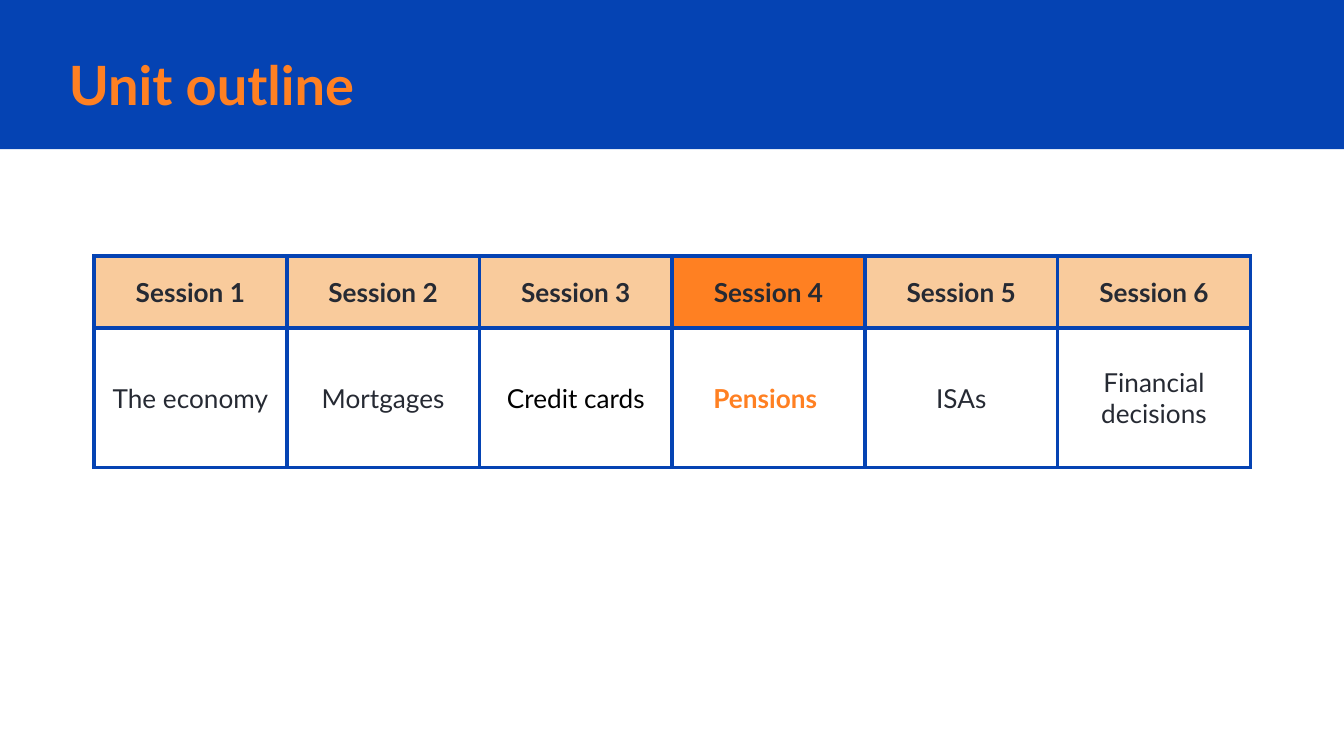
from dataclasses import dataclass

from lxml import etree
from pptx import Presentation
from pptx.dml.color import RGBColor
from pptx.enum.shapes import MSO_SHAPE
from pptx.enum.text import MSO_ANCHOR, PP_ALIGN
from pptx.oxml.ns import qn
from pptx.util import Pt

RECT = MSO_SHAPE.RECTANGLE
MIDDLE = MSO_ANCHOR.MIDDLE
LEFT, CENTER = PP_ALIGN.LEFT, PP_ALIGN.CENTER

BLUE = RGBColor(0x05, 0x43, 0xB3)
ORANGE = RGBColor(0xFF, 0x80, 0x22)
PEACH = RGBColor(0xF9, 0xCB, 0x9C)
INK = RGBColor(0x26, 0x2A, 0x33)
BLACK = RGBColor(0, 0, 0)

FONT = "Lato"
WIDTH, HEIGHT = 720, 405
COL = 103.25
ROWS = (38.6, 74.6)
EDGE = 2.25
SIDES = ("a:lnL", "a:lnR", "a:lnT", "a:lnB")


@dataclass
class Unit:
    topic: str
    fill: RGBColor = PEACH
    ink: RGBColor = INK
    bold: bool = False


UNITS = [
    Unit("The economy"),
    Unit("Mortgages"),
    Unit("Credit cards", ink=BLACK),
    Unit("Pensions ", ORANGE, ORANGE, True),
    Unit("ISAs"),
    Unit("Financial decisions"),
]


def write(frame, text: str, size: float, ink: RGBColor, bold: bool, align) -> None:
    para = frame.paragraphs[0]
    para.alignment = align
    run = para.add_run()
    run.text = text
    for name, value in {"name": FONT, "size": Pt(size), "bold": bold}.items():
        setattr(run.font, name, value)
    run.font.color.rgb = ink


def pad(box, inset: float) -> None:
    for side in ("left", "right", "top", "bottom"):
        setattr(box, f"margin_{side}", Pt(inset))
    box.vertical_anchor = MIDDLE


def border(cell) -> None:
    props = cell._tc.get_or_add_tcPr()
    for side in SIDES:
        line = etree.SubElement(props, qn(side), w=str(Pt(EDGE)))
        fill = etree.SubElement(line, qn("a:solidFill"))
        etree.SubElement(fill, qn("a:srgbClr"), val=str(BLUE))


def fill_cell(cell, text: str, fill: RGBColor | None, ink: RGBColor,
              bold: bool, inset: float) -> None:
    border(cell)
    if fill is None:
        cell.fill.background()
    else:
        cell.fill.solid()
        cell.fill.fore_color.rgb = fill
    pad(cell, inset)
    write(cell.text_frame, text, 14, ink, bold, CENTER)


def main() -> None:
    deck = Presentation()
    deck.slide_width, deck.slide_height = Pt(WIDTH), Pt(HEIGHT)
    slide = deck.slides.add_slide(deck.slide_layouts[6])

    # Header band
    band = slide.shapes.add_shape(RECT, 0, 0, Pt(WIDTH), Pt(80))
    band.shadow.inherit = False
    band.fill.solid()
    band.fill.fore_color.rgb = BLUE
    band.line.fill.background()

    # Title
    title = slide.shapes.add_textbox(Pt(29.8), Pt(20), Pt(678), Pt(50.4))
    title.text_frame.word_wrap = True
    pad(title.text_frame, 7.2)
    write(title.text_frame, "Unit outline", 29, ORANGE, True, LEFT)

    # Session table
    grid = slide.shapes.add_table(
        len(ROWS), len(UNITS), Pt(50.4), Pt(137.3),
        Pt(COL * len(UNITS)), Pt(sum(ROWS))).table
    grid.first_row = grid.horz_banding = False
    for row, height in zip(grid.rows, ROWS):
        row.height = Pt(height)
    for i, unit in enumerate(UNITS):
        grid.columns[i].width = Pt(COL)
        fill_cell(grid.cell(0, i), f"Session {i + 1}", unit.fill, INK, True, 7.2)
        fill_cell(grid.cell(1, i), unit.topic, None, unit.ink, unit.bold, 5)

    deck.save("out.pptx")


if __name__ == "__main__":
    main()
